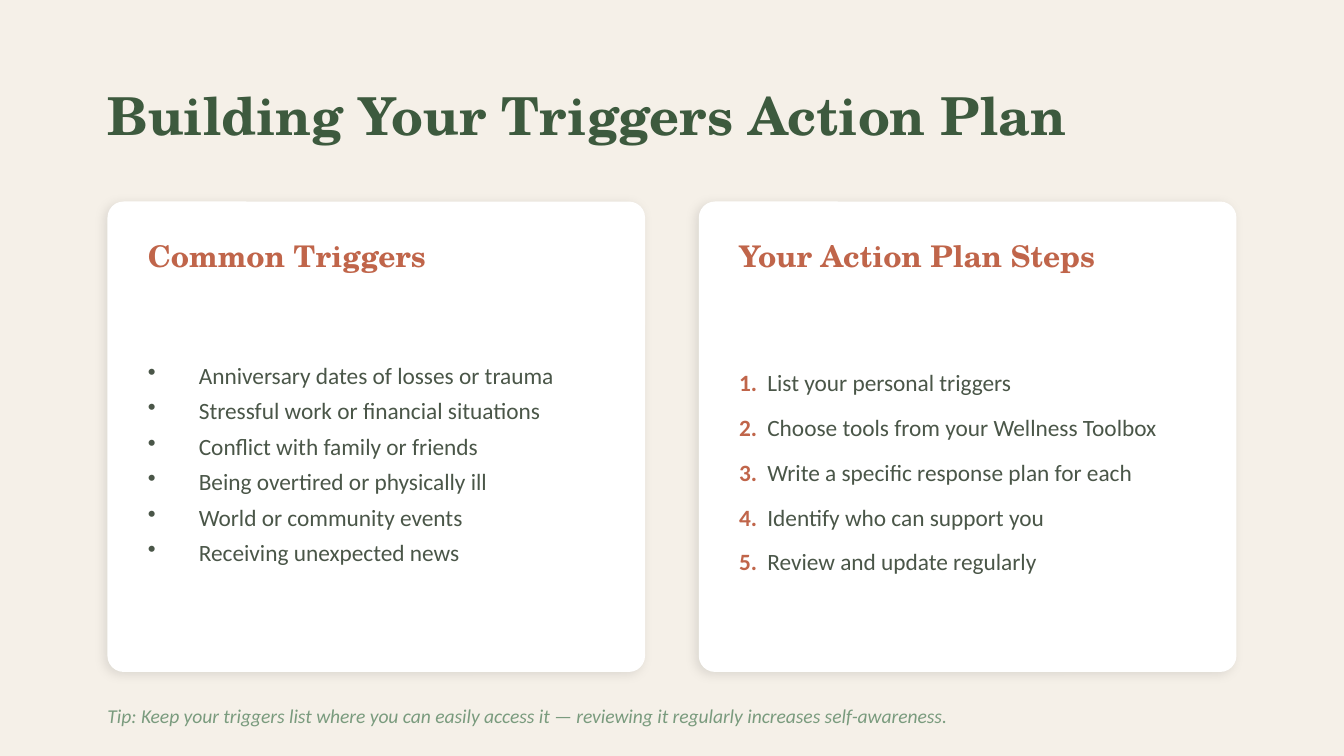
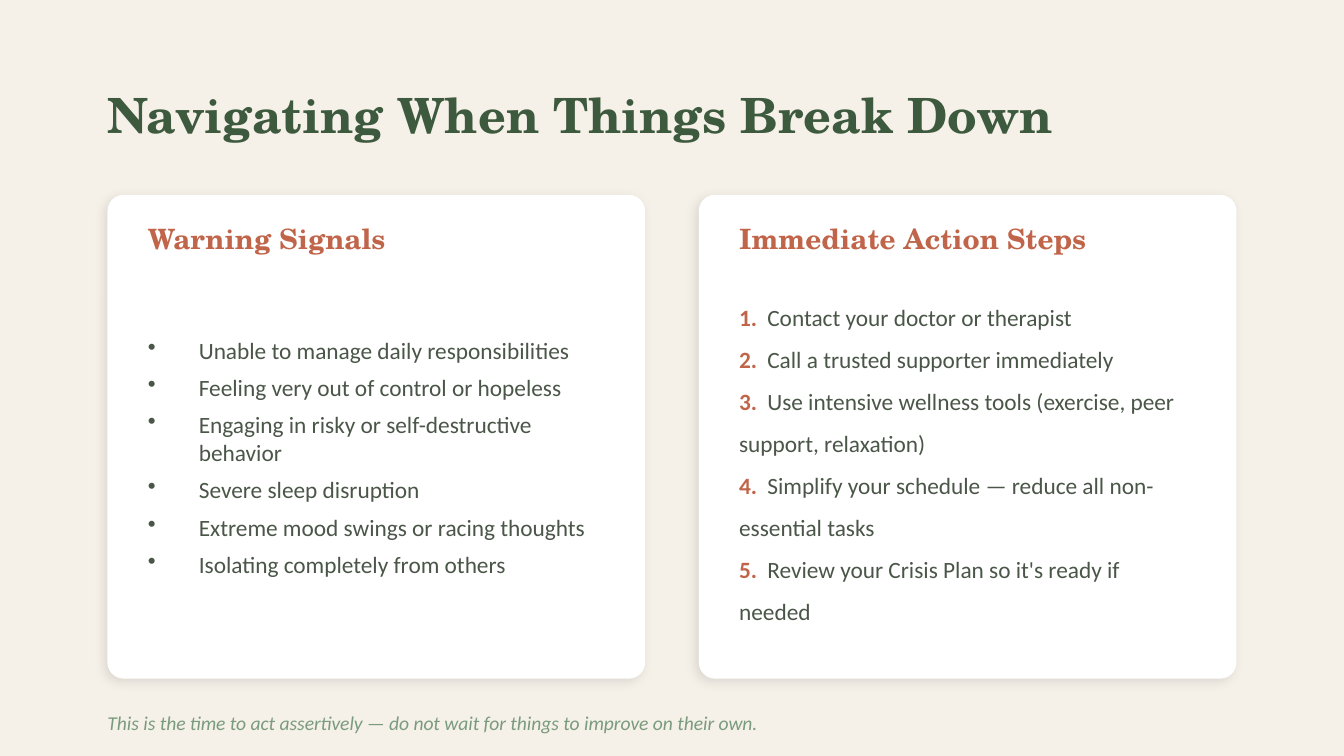
from lxml import etree
from pptx import Presentation
from pptx.dml.color import RGBColor
from pptx.enum.shapes import MSO_SHAPE
from pptx.enum.text import MSO_ANCHOR
from pptx.oxml.ns import qn
from pptx.util import Inches, Pt

ROUNDED = MSO_SHAPE.ROUNDED_RECTANGLE
MIDDLE = MSO_ANCHOR.MIDDLE

SERIF, SANS = "TeX Gyre Schola", "Calibri"
CREAM, WHITE, BLACK = "F5F0E8", "FFFFFF", "000000"
FOREST, CLAY, MOSS, SAGE = "3D5A3E", "C0654A", "4A5648", "7A9B7E"

# Lengths are in square grid units, 100 across the slide.
COLUMNS = 100
MARGIN = 8
GUTTER = 4
CARD_WIDTH = (COLUMNS - 2 * MARGIN - GUTTER) / 2
CARD_PADDING = 3
CORNER_RADIUS = 1.2
BODY_SIZE = 12.5


def rgb(code):
    return RGBColor.from_string(code)


def add_child(parent, tag, **attributes):
    child = etree.SubElement(parent, qn(tag))
    for name, value in attributes.items():
        child.set(name, str(value))
    return child


class Deck:
    def __init__(self):
        self.presentation = Presentation()
        self.presentation.slide_width = Inches(10)
        self.presentation.slide_height = Inches(5.625)
        self.unit = self.presentation.slide_width / COLUMNS
        self.slide = None

    def grid(self, *lengths):
        return [round(length * self.unit) for length in lengths]

    def new_slide(self):
        self.slide = self.presentation.slides.add_slide(
            self.presentation.slide_layouts[6])
        background = self.slide.background.fill
        background.solid()
        background.fore_color.rgb = rgb(CREAM)

    def frame(self, left, top, width, height):
        frame = self.slide.shapes.add_textbox(
            *self.grid(left, top, width, height)).text_frame
        frame.word_wrap = True
        frame.vertical_anchor = MIDDLE
        frame.margin_left = frame.margin_right = 0
        frame.margin_top = frame.margin_bottom = 0
        return frame

    def style(self, font, size, color, face=SANS, bold=None, italic=None):
        font.name, font.size = face, Pt(size)
        font.bold, font.italic = bold, italic
        font.color.rgb = rgb(color)

    def line(self, text, box, size, color, **look):
        paragraph = self.frame(*box).paragraphs[0]
        paragraph.text = text
        self.style(paragraph.font, size, color, **look)

    def title(self, text, size):
        self.line(text, (MARGIN, 5, 90, 7), size, FOREST, face=SERIF, bold=True)

    def footnote(self, text, top):
        self.line(text, (MARGIN, top, COLUMNS - 2 * MARGIN, 3.5), 10.5, SAGE,
                  italic=True)

    def card(self, left, top, height):
        card = self.slide.shapes.add_shape(
            ROUNDED, *self.grid(left, top, CARD_WIDTH, height))
        card.adjustments[0] = CORNER_RADIUS / height
        card.fill.solid()
        card.fill.fore_color.rgb = rgb(WHITE)
        card.line.fill.background()
        card.shadow.inherit = False
        effects = card._element.spPr.find(qn("a:effectLst"))
        shadow = add_child(effects, "a:outerShdw", blurRad=Pt(6), dist=Pt(2),
                           dir=135 * 60000, algn="bl", rotWithShape=0)
        add_child(add_child(shadow, "a:srgbClr", val=BLACK),
                  "a:alpha", val=10000)

    def paragraphs(self, box, items):
        """Yield one new paragraph of a single box with each item."""
        frame = self.frame(*box)
        for index, item in enumerate(items):
            yield (frame.add_paragraph() if index else frame.paragraphs[0]), item

    def bullets(self, box, items, gap):
        for paragraph, item in self.paragraphs(box, items):
            paragraph.text = item
            properties = paragraph._p.get_or_add_pPr()
            properties.set("marL", str(Inches(0.38)))
            properties.set("indent", str(-Inches(0.38)))
            add_child(properties, "a:buChar", char="•")
            paragraph.space_after = Pt(gap)
            self.style(paragraph.font, BODY_SIZE, MOSS)

    def steps(self, box, items, spacing):
        numbered = enumerate(items, 1)
        for paragraph, (number, item) in self.paragraphs(box, numbered):
            tabs = add_child(paragraph._p.get_or_add_pPr(), "a:tabLst")
            add_child(tabs, "a:tab", pos=Inches(0.21), algn="l")
            paragraph.line_spacing = spacing
            self.style(paragraph.font, BODY_SIZE, MOSS)
            label = paragraph.add_run()
            label.text = f"{number}.\t"
            label.font.bold = True
            label.font.color.rgb = rgb(CLAY)
            paragraph.add_run().text = item

    def plan(self, title, title_size, card_rows, heading_rows, body_rows,
             heading_size, signs, gap, actions, spacing, footnote):
        """Add a slide of two cards; each *_rows is a (top, height) pair."""
        self.new_slide()
        self.title(title, title_size)
        columns = ((signs, self.bullets, gap), (actions, self.steps, spacing))
        for index, ((heading, items), write, distance) in enumerate(columns):
            left = MARGIN + index * (CARD_WIDTH + GUTTER)
            self.card(left, *card_rows)
            inner_left = left + CARD_PADDING
            inner_width = CARD_WIDTH - 2 * CARD_PADDING
            heading_top, heading_height = heading_rows
            self.line(heading,
                      (inner_left, heading_top, inner_width, heading_height),
                      heading_size, CLAY, face=SERIF, bold=True)
            body_top, body_height = body_rows
            write((inner_left, body_top, inner_width, body_height),
                  items, distance)
        self.footnote(footnote, sum(card_rows) + 1.5)


def main():
    deck = Deck()
    deck.plan(
        "Building Your Triggers Action Plan", 28,
        card_rows=(15, 35), heading_rows=(17, 4), body_rows=(22, 25),
        heading_size=16,
        signs=("Common Triggers", [
            "Anniversary dates of losses or trauma",
            "Stressful work or financial situations",
            "Conflict with family or friends",
            "Being overtired or physically ill",
            "World or community events",
            "Receiving unexpected news",
        ]),
        gap=4,
        actions=("Your Action Plan Steps", [
            "List your personal triggers",
            "Choose tools from your Wellness Toolbox",
            "Write a specific response plan for each",
            "Identify who can support you",
            "Review and update regularly",
        ]),
        spacing=1.6,
        footnote="Tip: Keep your triggers list where you can easily access it"
                 " — reviewing it regularly increases self-awareness.")
    deck.plan(
        "Navigating When Things Break Down", 26,
        card_rows=(14.5, 36), heading_rows=(16, 3.5), body_rows=(20.5, 27),
        heading_size=15,
        signs=("Warning Signals", [
            "Unable to manage daily responsibilities",
            "Feeling very out of control or hopeless",
            "Engaging in risky or self-destructive behavior",
            "Severe sleep disruption",
            "Extreme mood swings or racing thoughts",
            "Isolating completely from others",
        ]),
        gap=5,
        actions=("Immediate Action Steps", [
            "Contact your doctor or therapist",
            "Call a trusted supporter immediately",
            "Use intensive wellness tools (exercise, peer support, relaxation)",
            "Simplify your schedule — reduce all non-essential tasks",
            "Review your Crisis Plan so it's ready if needed",
        ]),
        spacing=1.5,
        footnote="This is the time to act assertively — do not wait for things"
                 " to improve on their own.")
    deck.presentation.save("out.pptx")


if __name__ == "__main__":
    main()
